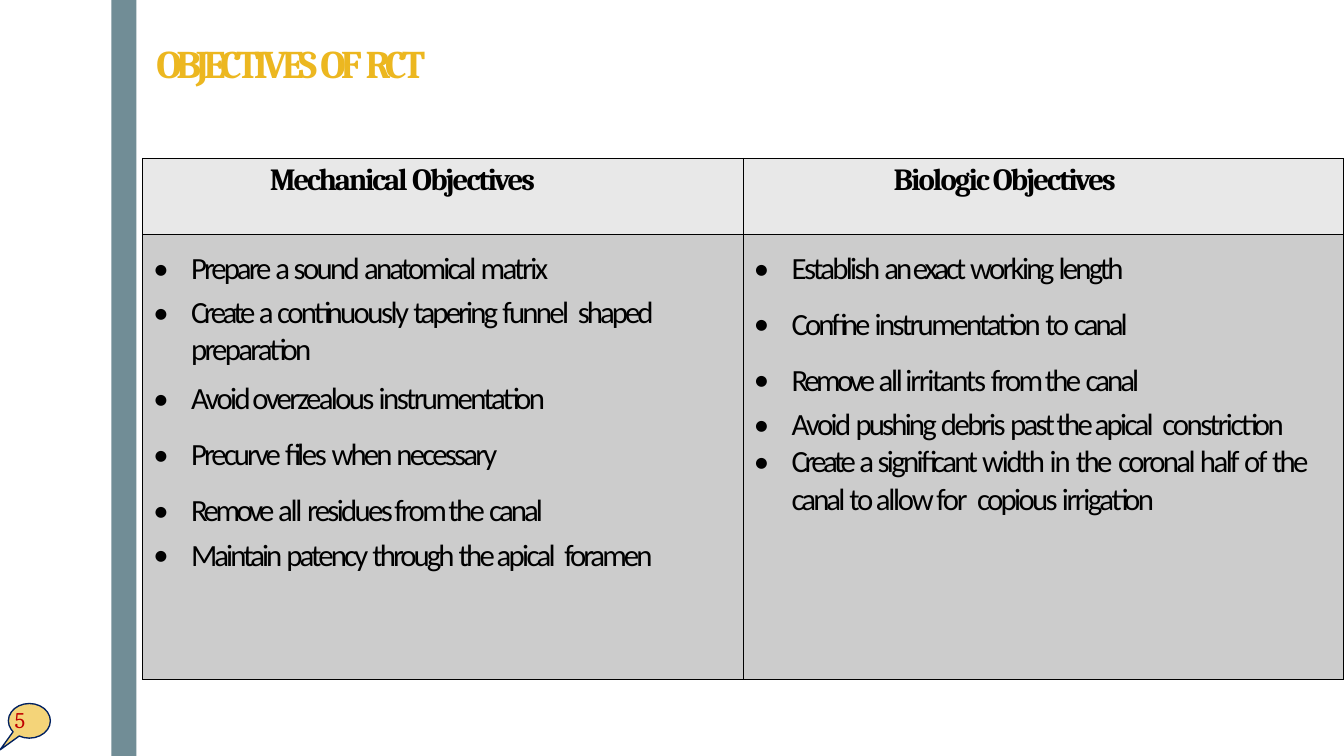
from lxml import etree
from pptx import Presentation
from pptx.dml.color import RGBColor
from pptx.enum.shapes import MSO_SHAPE
from pptx.enum.text import MSO_ANCHOR, MSO_AUTO_SIZE, PP_ALIGN
from pptx.oxml import parse_xml
from pptx.oxml.ns import nsdecls, qn
from pptx.util import Emu, Pt

RECTANGLE = MSO_SHAPE.RECTANGLE
CALLOUT = MSO_SHAPE.OVAL_CALLOUT
TOP = MSO_ANCHOR.TOP
LEFT = PP_ALIGN.LEFT
NO_AUTOFIT = MSO_AUTO_SIZE.NONE
TITLE_ONLY = 5
EMU_PER_PX = 9525

COLORS = {
    "bar": "134251", "bubble": "F4D479", "outline": "002060", "title": "ECB720",
    "number": "C00000", "text": "000000", "header": "E8E8E8", "body": "CCCCCC",
}

TITLE = [("OBJECTIVES ", -3.8), ("OF ", -3.5), ("RCT", -3.3)]

HEADERS = [
    (121, [("Mechanical ", -1.6), ("Objectives", -1.4)]),
    (143, [("Biologic Objectives", -1.4)]),
]

MECHANICAL = [
    (0, [("Prepare ", -2.1), ("a ", -2.4), ("sound ", -1.9), ("anatomical ", -2), ("matrix", -1.8)]),
    (4.8, [("Create ", -2.5), ("a ", -2.4), ("continuously ", -1.8), ("tapering ", -2),
           ("funnel  ", -1.9), ("shaped ", -2.1), ("preparation", -1.9)]),
    (8.4, [("Avoid overzealous", -1.9), (" instrumentation", -1.8)]),
    (13.2, [("Precurve ", -2.1), ("files ", -1.6), ("when ", -2.1), ("necessary", -2)]),
    (13.2, [("Remove ", -2.5), ("all ", -1.6), ("residues from the ", -1.9), ("canal", -2.1)]),
    (4.8, [("Maintain ", -2.1), ("patency ", -2), ("through ", -2.1), ("the apical  ", -1.9),
           ("foramen", -2.1)]),
]

BIOLOGIC = [
    (0, [("Establish ", -1.9), ("an exact ", -2.2), ("working ", -1.9), ("length", -2)]),
    (13.2, [("Confine ", -2.1), ("instrumentation ", -1.8), ("to ", -1.6), ("canal", -2.1)]),
    (13.2, [("Remove ", -2.5), ("all irritants ", -1.6), ("from the ", -1.9), ("canal", -2.1)]),
    (4.8, [("Avoid ", -1.9), ("pushing ", -2), ("debris ", -1.8), ("past the apical  ", -1.9),
           ("constriction", -1.7)]),
    (0, [("Create ", -2.5), ("a ", -2.4), ("significant ", -1.9), ("width ", -1.6), ("in ", -1.4),
         ("the  coronal ", -1.9), ("half ", -1.8), ("of ", -1.6), ("the ", -1.9), ("canal ", -2.1),
         ("to allow for  ", -1.6), ("copious ", -1.9), ("irrigation", -1.7)]),
]


def px(value):
    return Emu(value * EMU_PER_PX)


def color(name):
    return RGBColor.from_string(COLORS[name])


def set_indent(paragraph, left, first=0):
    properties = paragraph._p.get_or_add_pPr()
    properties.set("marL", str(px(left)))
    properties.set("indent", str(px(first)))
    paragraph.alignment = LEFT
    return properties


def add_runs(paragraph, runs, size, font_name, color_name, bold=False):
    for text, spacing in runs:
        run = paragraph.add_run()
        run.text = text
        run.font.size = Pt(size)
        run.font.name = font_name
        run.font.bold = bold
        run.font.color.rgb = color(color_name)
        run._r.get_or_add_rPr().set("spc", str(round(spacing * 100)))


def set_frame(frame, top=0):
    frame.word_wrap = True
    frame.auto_size = NO_AUTOFIT
    frame.vertical_anchor = TOP
    frame.margin_left = frame.margin_right = frame.margin_bottom = 0
    frame.margin_top = px(top)


def add_side_bar(slide, left, top, width, height):
    bar = slide.shapes.add_shape(RECTANGLE, px(left), px(top), px(width), px(height))
    bar.shadow.inherit = False
    bar.fill.solid()
    bar.fill.fore_color.rgb = color("bar")
    bar.line.fill.background()
    fill_color = bar._element.spPr.find(qn("a:solidFill"))[0]
    etree.SubElement(fill_color, qn("a:alpha")).set("val", "60000")


def add_page_number(slide, left, top, width, height):
    bubble = slide.shapes.add_shape(CALLOUT, px(left), px(top), px(width), px(height))
    bubble.shadow.inherit = False
    bubble.adjustments[0] = -0.7
    bubble.adjustments[1] = 0.84
    bubble.fill.solid()
    bubble.fill.fore_color.rgb = color("bubble")
    bubble.line.color.rgb = color("outline")
    bubble.line.width = Pt(0.96)
    number = slide.shapes.add_textbox(px(left + 3), px(top + 3), px(31), px(26))
    set_frame(number.text_frame)
    paragraph = number.text_frame.paragraphs[0]
    set_indent(paragraph, 3)
    add_runs(paragraph, [("5", -0.1)], 16, "Cambria", "number")


def place_title(slide, left, top, width, height):
    title = slide.shapes.title
    title.left, title.top, title.width, title.height = map(px, (left, top, width, height))
    set_frame(title.text_frame, top=1)
    paragraph = title.text_frame.paragraphs[0]
    set_indent(paragraph, 1)
    add_runs(paragraph, TITLE, 28, "Cambria", "title", bold=True)


def format_cell(cell, fill_name, top):
    cell.margin_left = cell.margin_right = cell.margin_bottom = 0
    cell.margin_top = px(top)
    cell.vertical_anchor = TOP
    properties = cell._tc.get_or_add_tcPr()
    for side in "LRTB":
        properties.append(parse_xml(
            f'<a:ln{side} {nsdecls("a")} w="12700"><a:solidFill>'
            f'<a:srgbClr val="{COLORS["text"]}"/></a:solidFill></a:ln{side}>'))
    cell.fill.solid()
    cell.fill.fore_color.rgb = color(fill_name)


def fill_bullets(frame, items):
    for index, (space_before, runs) in enumerate(items):
        paragraph = frame.paragraphs[0] if index == 0 else frame.add_paragraph()
        properties = set_indent(paragraph, 46, -36)
        etree.SubElement(properties, qn("a:buFont")).set("typeface", "Calibri")
        etree.SubElement(properties, qn("a:buChar")).set("char", "•")
        paragraph.space_before = Pt(space_before)
        add_runs(paragraph, runs, 22, "Calibri", "text")


def add_objectives_table(slide, left, top, width, height):
    header_height = 72
    frame = slide.shapes.add_table(2, 2, px(left), px(top), px(width), px(height))
    table = frame.table
    table.rows[0].height = px(header_height)
    table.rows[1].height = px(height - header_height)
    for column, (indent, header) in enumerate(HEADERS):
        table.columns[column].width = px(width // 2)
        cell = table.cell(0, column)
        format_cell(cell, "header", 4)
        paragraph = cell.text_frame.paragraphs[0]
        set_indent(paragraph, indent)
        add_runs(paragraph, header, 22, "Cambria", "text", bold=True)
    for column, items in enumerate((MECHANICAL, BIOLOGIC)):
        cell = table.cell(1, column)
        format_cell(cell, "body", 15)
        fill_bullets(cell.text_frame, items)


def main():
    presentation = Presentation()
    presentation.slide_width, presentation.slide_height = px(1280), px(720)
    slide = presentation.slides.add_slide(presentation.slide_layouts[TITLE_ONLY])
    add_side_bar(slide, 106, 0, 24, 720)
    add_page_number(slide, 8, 670, 40, 33)
    place_title(slide, 148, 36, 341, 46)
    add_objectives_table(slide, 136, 151, 1144, 496)
    presentation.save("out.pptx")


if __name__ == "__main__":
    main()
